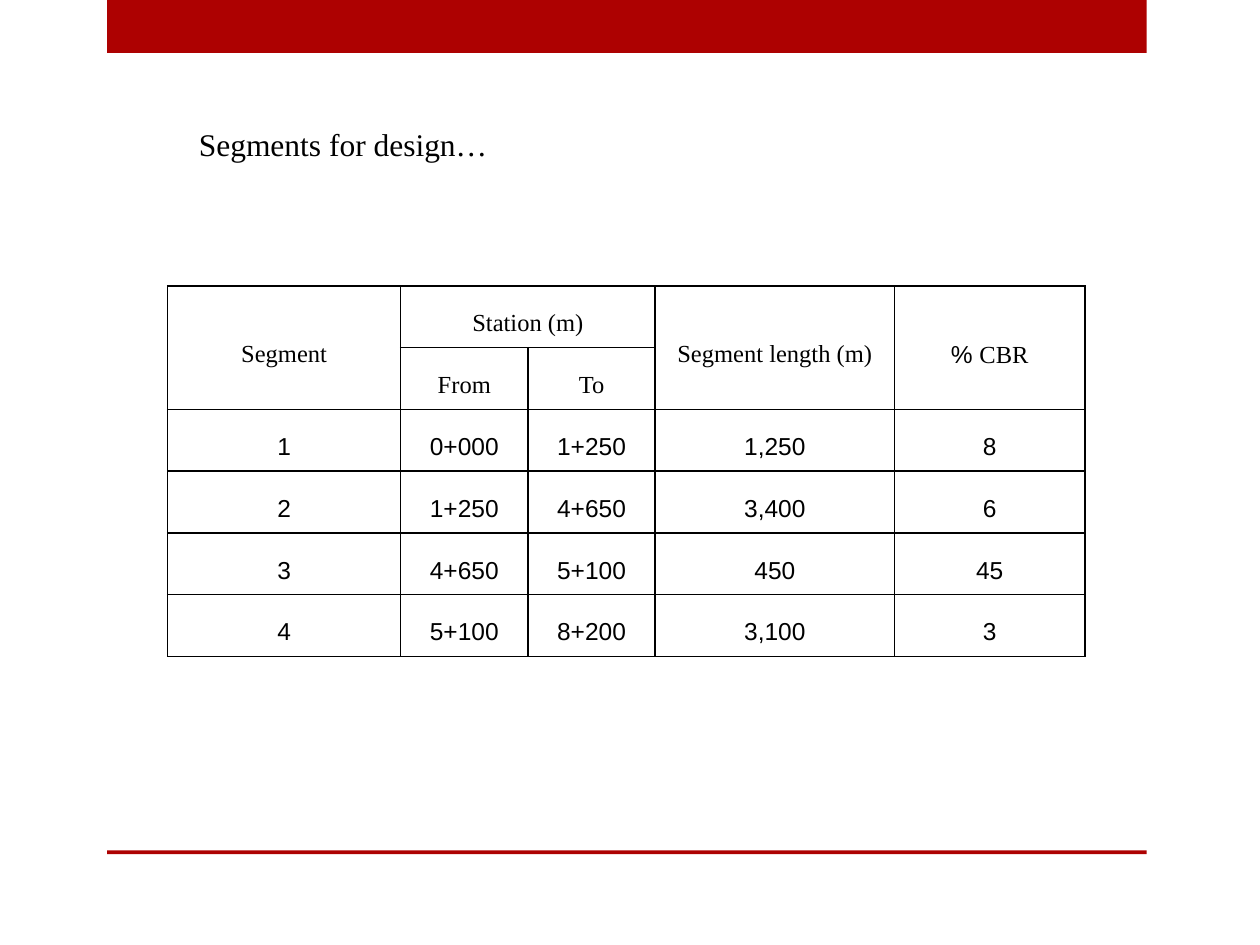
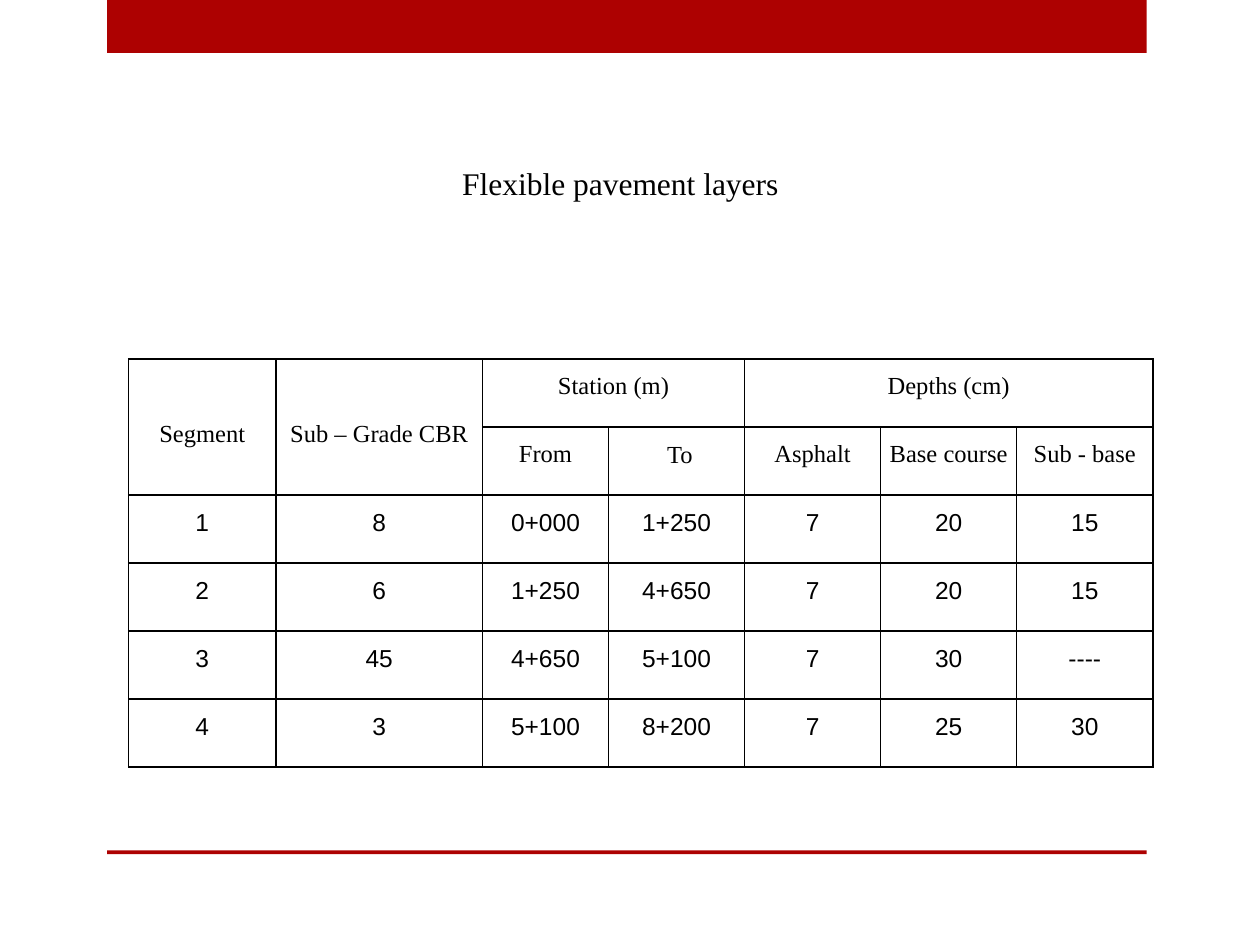
"""Builds two slides with tables of road design segments and pavement layers."""
from lxml.etree import SubElement
from pptx import Presentation
from pptx.dml.color import RGBColor
from pptx.enum.shapes import MSO_SHAPE
from pptx.enum.text import MSO_ANCHOR, MSO_AUTO_SIZE, PP_ALIGN
from pptx.oxml.ns import qn
from pptx.util import Inches, Pt

RED, BLACK = "AD0101", "000000"
FONT, DIGIT_FONT = "Times New Roman", "Arial"
BANDS = [(0, 0.42), (6.75, 0.03)]

SLIDES = [
    dict(
        title="Segments for design…", title_at=(1.48, 0.94, 7.34, 0.4), align=PP_ALIGN.LEFT,
        table_at=(1.33, 2.27), cols=[1.85, 1.01, 1.01, 1.9, 1.51], row_height=0.49,
        anchor=MSO_ANCHOR.MIDDLE,
        merges=[(0, 0, 1, 0), (0, 1, 0, 2), (0, 3, 1, 3), (0, 4, 1, 4)],
        rows=[
            ["Segment", "Station (m)", None, "Segment length (m)", "CBR %"],
            [None, "From", "To", None, None],
            ["1", "0+000", "1+250", "1,250", "8"],
            ["2", "1+250", "4+650", "3,400", "6"],
            ["3", "4+650", "5+100", "450", "45"],
            ["4", "5+100", "8+200", "3,100", "3"],
        ],
    ),
    dict(
        title="Flexible pavement layers", title_at=(1.41, 1.25, 7.03, 0.4), align=PP_ALIGN.CENTER,
        table_at=(1.02, 2.85), cols=[1.17, 1.64, 1, 1.08, 1.08, 1.08, 1.08], row_height=0.54,
        anchor=MSO_ANCHOR.TOP,
        merges=[(0, 0, 1, 0), (0, 1, 1, 1), (0, 2, 0, 3), (0, 4, 0, 6)],
        rows=[
            ["Segment", "Sub – Grade CBR", "Station (m)", None, "Depths (cm)", None, None],
            [None, None, "From", "To ", "Asphalt", "Base course", "Sub - base"],
            ["1", "8", "0+000", "1+250", "7", "20", "15"],
            ["2", "6", "1+250", "4+650", "7", "20", "15"],
            ["3", "45", "4+650", "5+100", "7", "30", "----"],
            ["4", "3", "5+100", "8+200", "7", "25", "30"],
        ],
    ),
]


def rgb(color):
    return RGBColor.from_string(color)


def write(tf, text, size=14, align=PP_ALIGN.CENTER, spacing=None, rtl=False):
    p = tf.paragraphs[0]
    p.alignment = align
    if spacing:
        p.line_spacing = spacing
    r = p.add_run()
    r.text = text
    r.font.size, r.font.name = Pt(size), FONT
    r.font.color.rgb = rgb(BLACK)
    if rtl:
        p._p.get_or_add_pPr().set("rtl", "1")
        SubElement(r._r.get_or_add_rPr(), qn("a:cs"), typeface=DIGIT_FONT)


def add_bands(slide):
    for top, height in BANDS:
        sp = slide.shapes.add_shape(
            MSO_SHAPE.RECTANGLE, Inches(0.85), Inches(top), Inches(8.25), Inches(height))
        sp.shadow.inherit = False
        sp.fill.solid()
        sp.fill.fore_color.rgb = rgb(RED)
        sp.line.fill.background()


def add_title(slide, text, at, align):
    tf = slide.shapes.add_textbox(*map(Inches, at)).text_frame
    tf.word_wrap = True
    tf.auto_size = MSO_AUTO_SIZE.SHAPE_TO_FIT_TEXT
    write(tf, text, size=18, align=align)


def set_borders(cell):
    tcPr = cell._tc.get_or_add_tcPr()
    for side in ("lnL", "lnR", "lnT", "lnB"):
        ln = SubElement(tcPr, qn(f"a:{side}"), w=str(Pt(1)))
        fill = SubElement(ln, qn("a:solidFill"))
        SubElement(fill, qn("a:srgbClr"), val=BLACK)


def add_grid(slide, rows, cols, at, row_height, merges, anchor):
    size = (sum(cols), row_height * len(rows))
    table = slide.shapes.add_table(len(rows), len(cols), *map(Inches, at + size)).table
    table.first_row = table.horz_banding = False
    for column, width in zip(table.columns, cols):
        column.width = Inches(width)
    for top, left, bottom, right in merges:
        table.cell(top, left).merge(table.cell(bottom, right))
    for i, row in enumerate(rows):
        table.rows[i].height = Inches(row_height)
        for j, text in enumerate(row):
            cell = table.cell(i, j)
            set_borders(cell)
            cell.fill.background()
            cell.margin_left = cell.margin_right = Inches(0.07)
            cell.margin_top = cell.margin_bottom = 0
            cell.vertical_anchor = MSO_ANCHOR.MIDDLE if cell.span_height > 1 else anchor
            if text:
                write(cell.text_frame, text, spacing=1.5, rtl=True)


def main():
    prs = Presentation()
    prs.slide_width, prs.slide_height = Inches(10), Inches(7.5)
    for s in SLIDES:
        slide = prs.slides.add_slide(prs.slide_layouts[6])
        add_bands(slide)
        add_grid(slide, s["rows"], s["cols"], s["table_at"], s["row_height"],
                 s["merges"], s["anchor"])
        add_title(slide, s["title"], s["title_at"], s["align"])
    prs.save("out.pptx")


if __name__ == "__main__":
    main()
